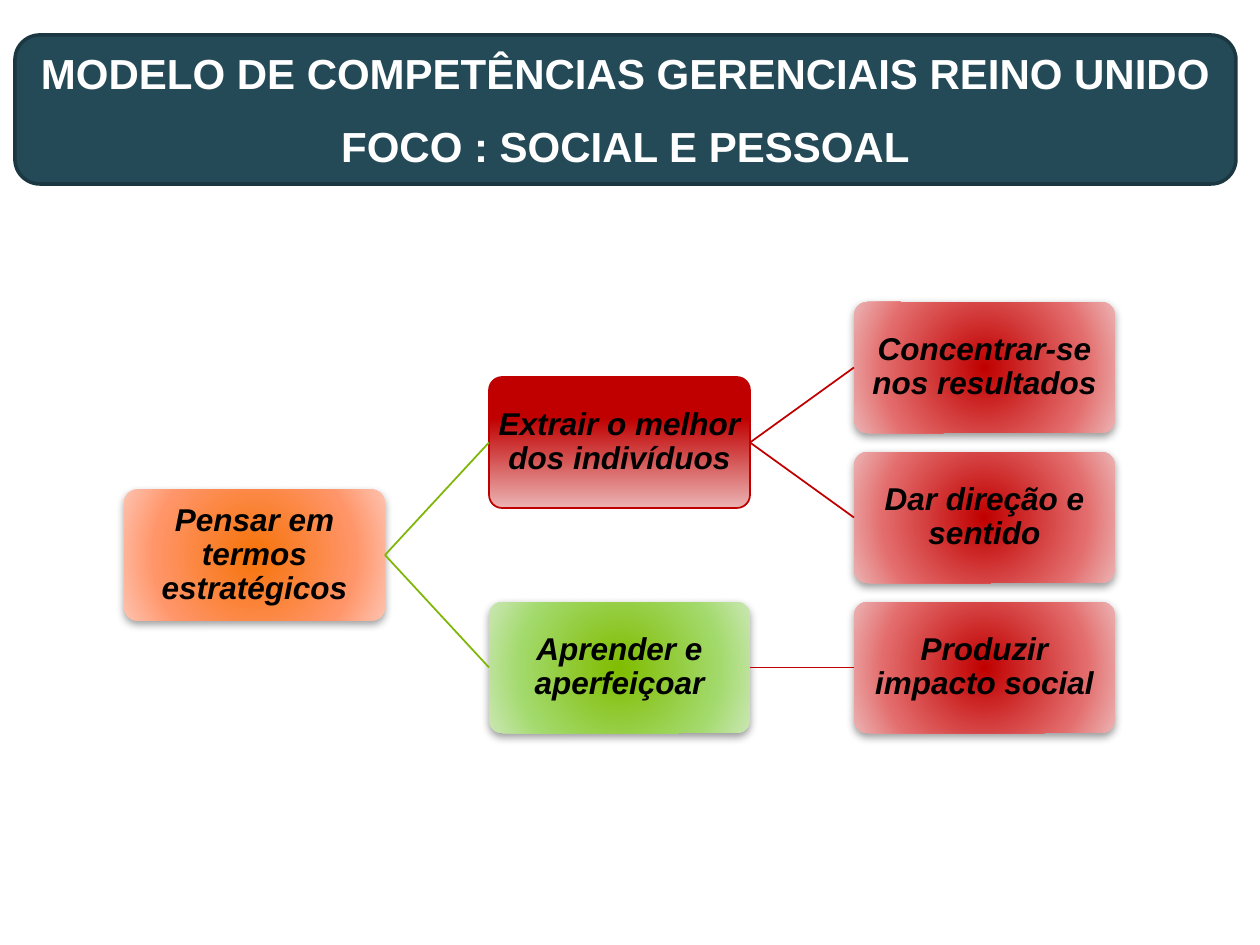
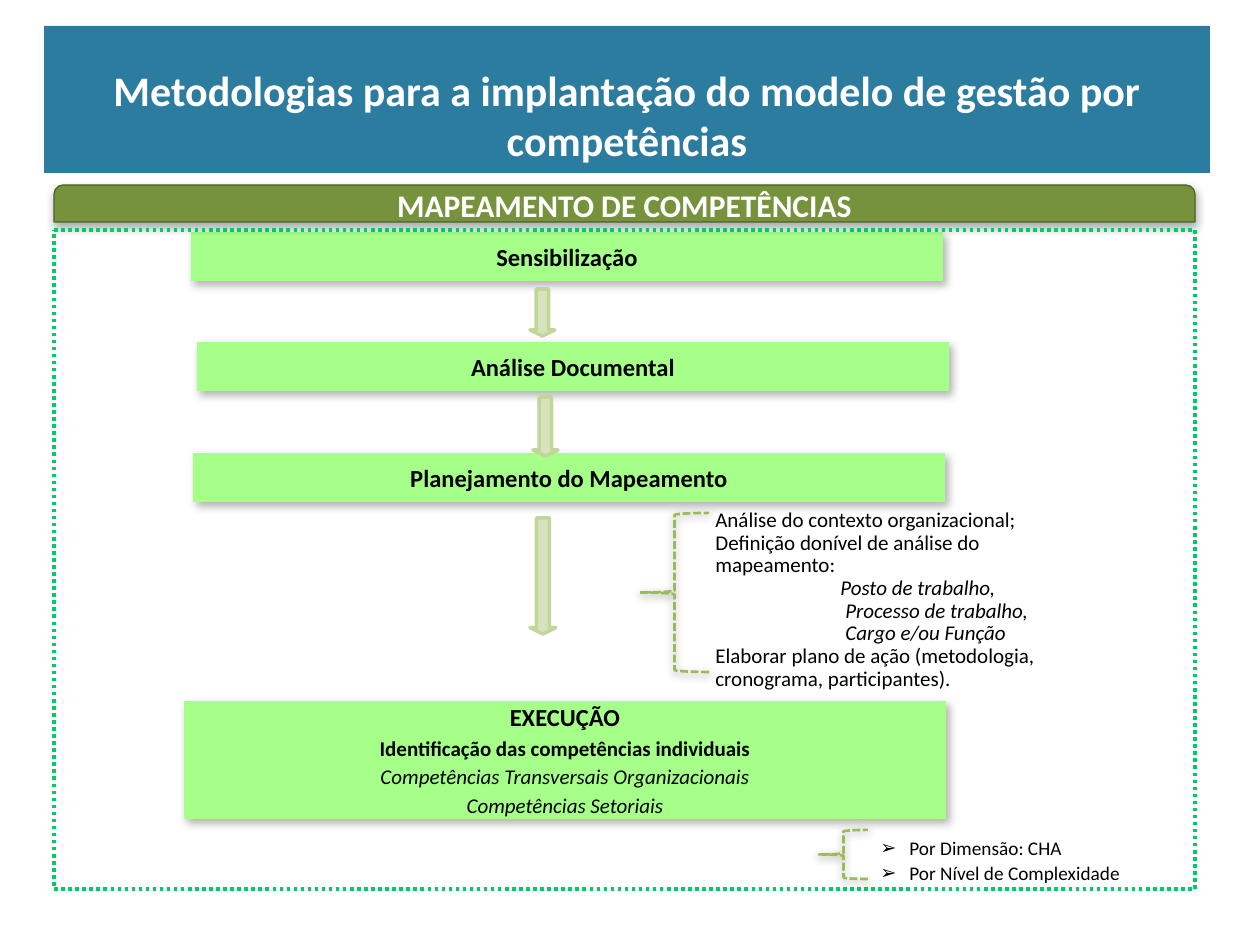
from lxml import etree
from pptx import Presentation
from pptx.dml.color import RGBColor
from pptx.enum.dml import MSO_LINE
from pptx.enum.shapes import MSO_CONNECTOR, MSO_SHAPE
from pptx.enum.text import MSO_ANCHOR, MSO_AUTO_SIZE, PP_ALIGN
from pptx.oxml.ns import qn
from pptx.util import Emu, Pt

ROUND, RECT = MSO_SHAPE.ROUNDED_RECTANGLE, MSO_SHAPE.RECTANGLE
PROCESS, ALT_PROCESS = MSO_SHAPE.FLOWCHART_PROCESS, MSO_SHAPE.FLOWCHART_ALTERNATE_PROCESS
TAB, BRACE, ARROW = MSO_SHAPE.ROUND_2_SAME_RECTANGLE, MSO_SHAPE.LEFT_BRACE, MSO_SHAPE.DOWN_ARROW
STRAIGHT = MSO_CONNECTOR.STRAIGHT
DASH, DOT = MSO_LINE.SQUARE_DOT, MSO_LINE.ROUND_DOT
TOP, MIDDLE = MSO_ANCHOR.TOP, MSO_ANCHOR.MIDDLE
LEFT, CENTER = PP_ALIGN.LEFT, PP_ALIGN.CENTER
RIGHT_SIDE, LEFT_SIDE = 3, 1

PX_PER_INCH = 126
WIDTH, HEIGHT = 1260, 945

COLORS = {
    "white": "FFFFFF", "black": "000000",
    "navy": "244A58", "navy_edge": "1B3741", "blue": "2C7C9F",
    "red": "C00000", "lime": "7EB606",
    "olive": "76923C", "olive_edge": "4E6128", "step": "A5FF89",
    "frame": "00CC66", "brace": "9BBB59", "arrow": "D6E3BC", "arrow_edge": "C2D69B",
}

# Gradients: stops (percent, colour); radial unless an angle is given
GRADIENTS = {
    "orange": ([(0, "F67309"), (69, "FF9569"), (100, "FEC3B0")], None),
    "red": ([(0, "C00000"), (69, "E36B6B"), (100, "ECB3B3")], None),
    "green": ([(0, "80BC00"), (69, "A3DA6D"), (100, "CBE7B4")], None),
    "red_down": ([(31, "C00000"), (100, "ECB3B3")], 90),
}

# Shadows: opacity percent, distance pt, angle
NODE_SHADOW = (40, 2, 90)
STEP_SHADOW = (30, 2.6, 53)
TAB_SHADOW = (32, 2.2, 90)
BRACE_SHADOW = (38, 1.6, 90)

MODEL_TITLE = ["MODELO DE COMPETÊNCIAS GERENCIAIS REINO UNIDO", "FOCO : SOCIAL E PESSOAL"]
MODEL_BAND = (15, 35, 1221, 149)

# name: (text, column, row, gradient)
NODES = {
    "pensar": ("Pensar em termos estratégicos", 0, 1.25, "orange"),
    "extrair": ("Extrair o melhor dos indivíduos", 1, 0.5, "red_down"),
    "aprender": ("Aprender e aperfeiçoar", 1, 2, "green"),
    "concentrar": ("Concentrar-se nos resultados", 2, 0, "red"),
    "dar": ("Dar direção e sentido", 2, 1, "red"),
    "produzir": ("Produzir impacto social", 2, 2, "red"),
}
LINKS = [
    ("pensar", "extrair", "lime"), ("pensar", "aprender", "lime"),
    ("extrair", "concentrar", "red"), ("extrair", "dar", "red"),
    ("aprender", "produzir", "red"),
]
NODE_LEFT, NODE_TOP, NODE_W, NODE_H = 124, 302, 261, 131
COL_STEP, ROW_STEP = 365, 150

METHOD_TITLE = ["Metodologias para a implantação do modelo de gestão por competências"]
METHOD_BAND = (44, 26, 1166, 147)
TAB_TEXT = "MAPEAMENTO DE COMPETÊNCIAS"
TAB_BOX = (54, 185, 1141, 37)
FRAME_BOX = (54, 230, 1141, 659)

STEPS = [
    ("Sensibilização", 191, 232),
    ("Análise Documental", 197, 342),
    ("Planejamento do Mapeamento", 193, 453),
]
STEP_W, STEP_H = 752, 49
EXECUTION_BOX = (184, 701, 762, 118)
# (text, size, bold, italic)
EXECUTION = [
    ("EXECUÇÃO", 14, True, False),
    ("Identificação das competências individuais", 12, True, False),
    ("Competências Transversais Organizacionais", 12, False, True),
    ("Competências Setoriais", 12, False, True),
]
ARROWS = [(530, 289, 25, 47), (533, 397, 25, 59), (530, 518, 26, 116)]
BRACES = [(640, 513, 69, 159), (819, 830, 49, 49)]
PLAN_BOX = (640, 503, 454, 197)
# (text, indent, italic)
PLAN = [
    ("Análise do contexto organizacional;", 63, False),
    ("Definição donível de análise do mapeamento:", 63, False),
    ("Posto de trabalho,", 188, True),
    ("Processo de trabalho,", 193, True),
    ("Cargo e/ou Função", 193, True),
    ("Elaborar plano de ação (metodologia, cronograma, participantes).", 63, False),
]
CRITERIA_BOX = (868, 830, 328, 59)
CRITERIA = ["Por Dimensão: CHA", "Por Nível de Complexidade"]
BULLET_INDENT = 29


def px(n):
    return Emu(round(n * 914400 / PX_PER_INCH))


def rgb(name):
    return RGBColor.from_string(COLORS[name])


def sub(parent, tag, **attrs):
    return etree.SubElement(parent, qn(tag), {k: str(v) for k, v in attrs.items()})


def set_shadow(shape, opacity, distance, angle):
    effects = shape.element.spPr.find(qn("a:effectLst"))
    outer = sub(effects, "a:outerShdw", blurRad=Pt(5), dist=Pt(distance),
                dir=angle * 60000, rotWithShape=0)
    color = sub(outer, "a:srgbClr", val=COLORS["black"])
    sub(color, "a:alpha", val=opacity * 1000)


def set_gradient(shape, stops, angle):
    shape.fill.gradient()
    grad = shape.element.spPr.find(qn("a:gradFill"))
    for child in list(grad):
        grad.remove(child)
    stop_list = sub(grad, "a:gsLst")
    for pos, color in stops:
        sub(sub(stop_list, "a:gs", pos=pos * 1000), "a:srgbClr", val=color)
    if angle is None:
        sub(sub(grad, "a:path", path="circle"), "a:fillToRect",
            l=50000, t=50000, r=50000, b=50000)
    else:
        sub(grad, "a:lin", ang=angle * 60000, scaled=0)


def add_shape(s, kind, box, fill=None, line=None, width=1, dash=None, adj=(), shadow=None):
    sp = s.shapes.add_shape(kind, *map(px, box))
    sp.shadow.inherit = False
    for i, value in enumerate(adj):
        sp.adjustments[i] = value
    if fill in COLORS:
        sp.fill.solid()
        sp.fill.fore_color.rgb = rgb(fill)
    else:
        sp.fill.background()
    if line:
        sp.line.color.rgb = rgb(line)
        sp.line.width = Pt(width)
        if dash:
            sp.line.dash_style = dash
    else:
        sp.line.fill.background()
    if shadow:
        set_shadow(sp, *shadow)
    return sp


def write(sp, lines, size, font="Calibri", color="black", bold=False, italic=False,
          align=CENTER, anchor=MIDDLE, margins=None, wrap=True):
    """Fill a shape with one paragraph per line and return the paragraphs."""
    tf = sp.text_frame
    tf.text = "\n".join(lines)
    tf.word_wrap = wrap
    tf.auto_size = MSO_AUTO_SIZE.NONE
    tf.vertical_anchor = anchor
    if margins:
        tf.margin_left, tf.margin_top, tf.margin_right, tf.margin_bottom = map(px, margins)
    for p in tf.paragraphs:
        p.alignment = align
        f = p.runs[0].font
        f.name, f.size, f.bold, f.italic = font, Pt(size), bold, italic
        f.color.rgb = rgb(color)
    return tf.paragraphs


def add_title(s, lines, box, font, **options):
    """Place the title in front of what has been drawn so far."""
    title = s.shapes.title
    title.left, title.top, title.width, title.height = map(px, box)
    s.shapes.element.append(title.element)
    for p in write(title, lines, 24, font, "white", bold=True, **options)[1:]:
        p.space_before = Pt(13)
    return title


def add_text(s, box, lines, size):
    sp = s.shapes.add_textbox(*map(px, box))
    return write(sp, lines, size, align=LEFT, anchor=TOP)


def add_link(s, start, end, color):
    c = s.shapes.add_connector(STRAIGHT, 0, 0, 0, 0)
    c.begin_connect(start, RIGHT_SIDE)
    c.end_connect(end, LEFT_SIDE)
    c.line.color.rgb = rgb(color)
    c.line.width = Pt(1)
    sub(c.element.spPr, "a:effectLst")


def build_model(s):
    add_shape(s, ALT_PROCESS, MODEL_BAND, "navy", "navy_edge", 2)
    add_title(s, MODEL_TITLE, MODEL_BAND, "Arial", wrap=False)
    shapes = {}
    for name, (text, col, row, gradient) in NODES.items():
        box = (NODE_LEFT + col * COL_STEP, NODE_TOP + row * ROW_STEP, NODE_W, NODE_H)
        linear = gradient == "red_down"
        sp = add_shape(s, ROUND, box, line="red" if linear else None, adj=[0.1],
                       shadow=None if linear else NODE_SHADOW)
        set_gradient(sp, *GRADIENTS[gradient])
        for p in write(sp, [text], 18, "Arial", bold=True, italic=True, margins=(1, 1, 1, 1)):
            p.line_spacing = 0.9
        shapes[name] = sp
    for start, end, color in LINKS:
        add_link(s, shapes[start], shapes[end], color)


def build_method(s):
    title = add_title(s, METHOD_TITLE, METHOD_BAND, "Calibri", anchor=TOP,
                      margins=(13, 38, 13, 6))
    title.fill.solid()
    title.fill.fore_color.rgb = rgb("blue")

    for text, left, top in STEPS:
        sp = add_shape(s, PROCESS, (left, top, STEP_W, STEP_H), "step", shadow=STEP_SHADOW)
        write(sp, [text], 14, bold=True)
    tab = add_shape(s, TAB, TAB_BOX, "olive", "olive_edge", 0.75, adj=[0.25, 0],
                    shadow=TAB_SHADOW)
    write(tab, [TAB_TEXT], 18, color="white", bold=True, margins=(13, 0, 13, 0))

    execution = add_shape(s, PROCESS, EXECUTION_BOX, "step", shadow=STEP_SHADOW)
    paragraphs = write(execution, [row[0] for row in EXECUTION], 12)
    for p, (_, size, bold, italic) in zip(paragraphs, EXECUTION):
        p.space_before = p.space_after = Pt(1)
        f = p.runs[0].font
        f.size, f.bold, f.italic = Pt(size), bold, italic

    add_shape(s, PROCESS, FRAME_BOX, line="frame", width=2, dash=DOT)
    for box in BRACES:
        add_shape(s, BRACE, box, line="brace", width=1.5, dash=DASH, adj=[0.03, 0.5],
                  shadow=BRACE_SHADOW)

    paragraphs = add_text(s, PLAN_BOX, [row[0] for row in PLAN], 12)
    for p, (_, indent, italic) in zip(paragraphs, PLAN):
        p.line_spacing = 0.9
        p.runs[0].font.italic = italic
        p._p.get_or_add_pPr().set("marL", str(px(indent)))

    for p in add_text(s, CRITERIA_BOX, CRITERIA, 11):
        p.space_after = Pt(1)
        props = p._p.get_or_add_pPr()
        props.set("marL", str(px(BULLET_INDENT)))
        props.set("indent", str(px(-BULLET_INDENT)))
        sub(sub(props, "a:buClr"), "a:srgbClr", val=COLORS["black"])
        sub(props, "a:buFont", typeface="Arial")
        sub(props, "a:buChar", char="➢")

    for box in ARROWS:
        add_shape(s, ARROW, box, "arrow", "arrow_edge", 2, adj=[0.5, 0.24])


def main():
    prs = Presentation()
    prs.slide_width, prs.slide_height = px(WIDTH), px(HEIGHT)
    title_only = prs.slide_layouts[5]
    for build in (build_model, build_method):
        build(prs.slides.add_slide(title_only))
    prs.save("out.pptx")


if __name__ == "__main__":
    main()
